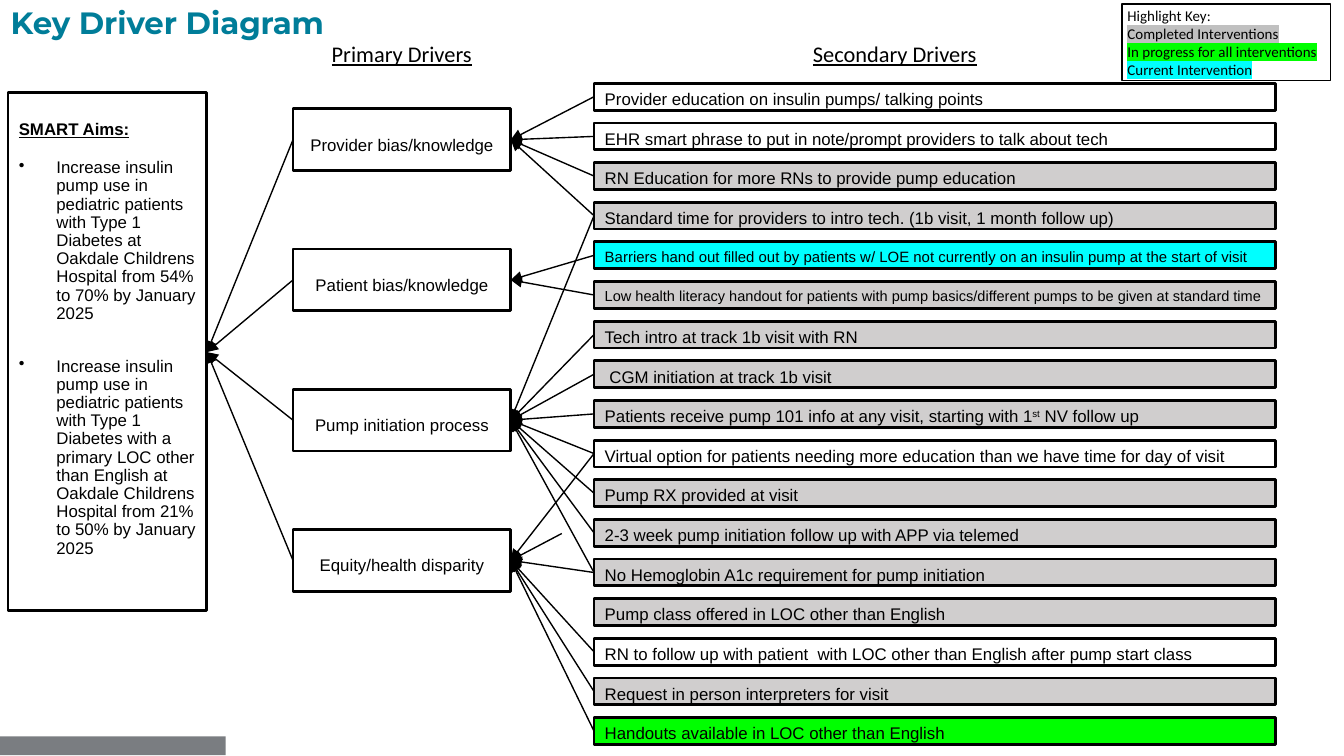
"""Build the key driver diagram slide."""
from typing import NamedTuple

from pptx import Presentation
from pptx.dml.color import RGBColor
from pptx.enum.shapes import MSO_CONNECTOR as CONN, MSO_SHAPE as SHAPE
from pptx.enum.text import MSO_ANCHOR as ANCHOR, PP_ALIGN as ALIGN
from pptx.oxml.ns import qn
from pptx.util import Inches, Pt
from lxml.etree import SubElement

BLACK, WHITE, GREY, CYAN, GREEN = "000000", "FFFFFF", "D0CECE", "00FFFF", "00FF00"
AIM_X, AIM_Y = 1.54, 2.62
PRIMARY_X, PRIMARY_W, PRIMARY_H = 2.18, 1.62, 0.46
SECONDARY_X, SECONDARY_W, SECONDARY_H = 4.42, 5.07, 0.2


class Primary(NamedTuple):
    text: str
    links: tuple[int, ...]


class Secondary(NamedTuple):
    text: str
    fill: str = GREY
    size: float = 9


class Label(NamedTuple):
    text: str
    x: float
    w: float


PRIMARIES = [
    Primary("Provider bias/knowledge", (0, 1, 2, 3)),
    Primary("Patient bias/knowledge", (4, 5)),
    Primary("Pump initiation process", (3, 6, 7, 8, 9, 10, 11, 12)),
    Primary("Equity/health disparity", (9, 12, 14, 15, 16)),
]
SECONDARIES = [
    Secondary("Provider education on insulin pumps/ talking points", WHITE),
    Secondary("EHR smart phrase to put in note/prompt providers to talk about tech", WHITE),
    Secondary("RN Education for more RNs to provide pump education"),
    Secondary("Standard time for providers to intro tech. (1b visit, 1 month follow up)"),
    Secondary("Barriers hand out filled out by patients w/ LOE not currently on an insulin pump "
              "at the start of visit", CYAN, 8),
    Secondary("Low health literacy handout for patients with pump basics/different pumps "
              "to be given at standard time", GREY, 7.8),
    Secondary("Tech intro at track 1b visit with RN"),
    Secondary(" CGM initiation at track 1b visit"),
    Secondary("Patients receive pump 101 info at any visit, starting with 1^st^ NV follow up"),
    Secondary("Virtual option for patients needing more education than we have time "
              "for day of visit", WHITE),
    Secondary("Pump RX provided at visit"),
    Secondary("2-3 week pump initiation follow up with APP via telemed"),
    Secondary("No Hemoglobin A1c requirement for pump initiation"),
    Secondary("Pump class offered in LOC other than English"),
    Secondary("RN to follow up with patient  with LOC other than English after pump start class",
              WHITE),
    Secondary("Request in person interpreters for visit"),
    Secondary("Handouts available in LOC other than English", GREEN),
]
AIMS = [
    "Increase insulin pump use in pediatric patients with Type 1 Diabetes at "
    "Oakdale Childrens Hospital from 54% to 70% by January 2025",
    "Increase insulin pump use in pediatric patients with Type 1 Diabetes with a primary "
    "LOC other than English at Oakdale Childrens Hospital from 21% to 50% by January 2025",
]
HEADINGS = [Label("Primary Drivers", 2.37, 1.24), Label("Secondary Drivers", 5.95, 1.48)]
KEY = [("Highlight Key:", None), ("Completed Interventions", "C0C0C0"),
       ("In progress for all interventions", GREEN), ("Current Intervention", CYAN)]


def rgb(value: str) -> RGBColor:
    return RGBColor.from_string(value)


def add_run(p, text: str, size: float, font: str = "Arial", color: str = BLACK,
            bold: bool = False, underline: bool = False):
    r = p.add_run()
    r.text = text
    r.font.size, r.font.name = Pt(size), font
    r.font.bold, r.font.underline = bold, underline
    r.font.color.rgb = rgb(color)
    return r


def add_box(s, x: float, y: float, w: float, h: float, fill: str | None = WHITE,
            line: float = 1.5):
    sp = s.shapes.add_shape(SHAPE.RECTANGLE, Inches(x), Inches(y), Inches(w), Inches(h))
    sp.shadow.inherit = False
    if fill:
        sp.fill.solid()
        sp.fill.fore_color.rgb = rgb(fill)
    else:
        sp.fill.background()
    if line:
        sp.line.color.rgb = rgb(BLACK)
        sp.line.width = Pt(line)
    else:
        sp.line.fill.background()
    set_frame(sp.text_frame)
    sp.text_frame.paragraphs[0].alignment = ALIGN.LEFT
    return sp


def set_frame(tf, top: float = 0.04) -> None:
    tf.word_wrap = True
    tf.vertical_anchor = ANCHOR.TOP
    tf.margin_left = tf.margin_right = Inches(0.08)
    tf.margin_top, tf.margin_bottom = Inches(top), Inches(0.04)


def add_text_box(s, x: float, y: float, w: float, h: float):
    tf = s.shapes.add_textbox(Inches(x), Inches(y), Inches(w), Inches(h)).text_frame
    tf.word_wrap = True
    return tf


def add_arrow(s, x1: float, y1: float, x2: float, y2: float) -> None:
    cn = s.shapes.add_connector(CONN.STRAIGHT, Inches(x1), Inches(y1), Inches(x2), Inches(y2))
    cn.line.color.rgb = rgb(BLACK)
    cn.line.width = Pt(0.75)
    SubElement(cn.line._get_or_add_ln(), qn("a:tailEnd"), type="triangle")
    SubElement(cn._element.spPr, qn("a:effectLst"))


def add_aims(s) -> None:
    tf = add_box(s, 0.06, 0.69, 1.48, 3.85).text_frame
    set_frame(tf, 0.19)
    p = tf.paragraphs[0]
    p.space_after = Pt(11)
    add_run(p, "SMART Aims:", 9, bold=True, underline=True)
    for aim in AIMS:
        p = tf.add_paragraph()
        pPr = p._p.get_or_add_pPr()
        pPr.set("marL", str(Inches(0.28)))
        pPr.set("indent", str(-Inches(0.28)))
        SubElement(pPr, qn("a:buChar"), char="•")
        p.alignment = ALIGN.LEFT
        p.line_spacing = 0.9
        p.space_after = Pt(18.6)
        add_run(p, aim, 9)


def add_key(s) -> None:
    tf = add_text_box(s, 8.29, 0, 1.71, 0.66)
    for i, (text, color) in enumerate(KEY):
        p = tf.add_paragraph() if i else tf.paragraphs[0]
        r = add_run(p, text, 8, "Calibri")
        if color:
            rPr = r._r.get_or_add_rPr()
            highlight = SubElement(rPr, qn("a:highlight"))
            SubElement(highlight, qn("a:srgbClr"), val=color)
            rPr.find(qn("a:solidFill")).addnext(highlight)
    add_box(s, 8.35, 0.03, 1.55, 0.57, None, 1)


def add_drivers(s) -> None:
    tops = [0.62 + 4.72 * i / 16 for i in range(len(SECONDARIES))]
    for top, item in zip(tops, SECONDARIES):
        sp = add_box(s, SECONDARY_X, top, SECONDARY_W, SECONDARY_H, item.fill)
        for i, part in enumerate(item.text.split("^")):
            r = add_run(sp.text_frame.paragraphs[0], part, item.size)
            if i % 2:
                r._r.get_or_add_rPr().set("baseline", "30000")
    for i, driver in enumerate(PRIMARIES):
        top = 0.81 + 3.13 * i / 3
        middle = top + PRIMARY_H / 2
        p = add_box(s, PRIMARY_X, top, PRIMARY_W, PRIMARY_H).text_frame.paragraphs[0]
        p.alignment, p.line_spacing = ALIGN.CENTER, 2.0
        add_run(p, driver.text, 9)
        add_arrow(s, PRIMARY_X, middle, AIM_X, AIM_Y)
        for k in driver.links:
            add_arrow(s, SECONDARY_X, tops[k] + SECONDARY_H / 2, PRIMARY_X + PRIMARY_W, middle)
    add_arrow(s, 4.18, 3.97, PRIMARY_X + PRIMARY_W, middle)


def main() -> None:
    prs = Presentation()
    prs.slide_width, prs.slide_height = Inches(10), Inches(10 * 9 / 16)
    s = prs.slides.add_slide(prs.slide_layouts[6])
    add_box(s, 0, 5.48, 1.68, 0.14, "7A7D81", 0)
    add_aims(s)
    add_drivers(s)
    tf = add_text_box(s, 0, -0.01, 2.61, 0.35)
    set_frame(tf)
    tf.vertical_anchor = ANCHOR.MIDDLE
    add_run(tf.paragraphs[0], "Key Driver Diagram", 16.5, "Montserrat", "007D99", bold=True)
    for label in HEADINGS:
        tf = add_text_box(s, label.x, 0.25, label.w, 0.3)
        add_run(tf.paragraphs[0], label.text, 12, "Calibri", underline=True)
    add_key(s)
    prs.save("out.pptx")


if __name__ == "__main__":
    main()
